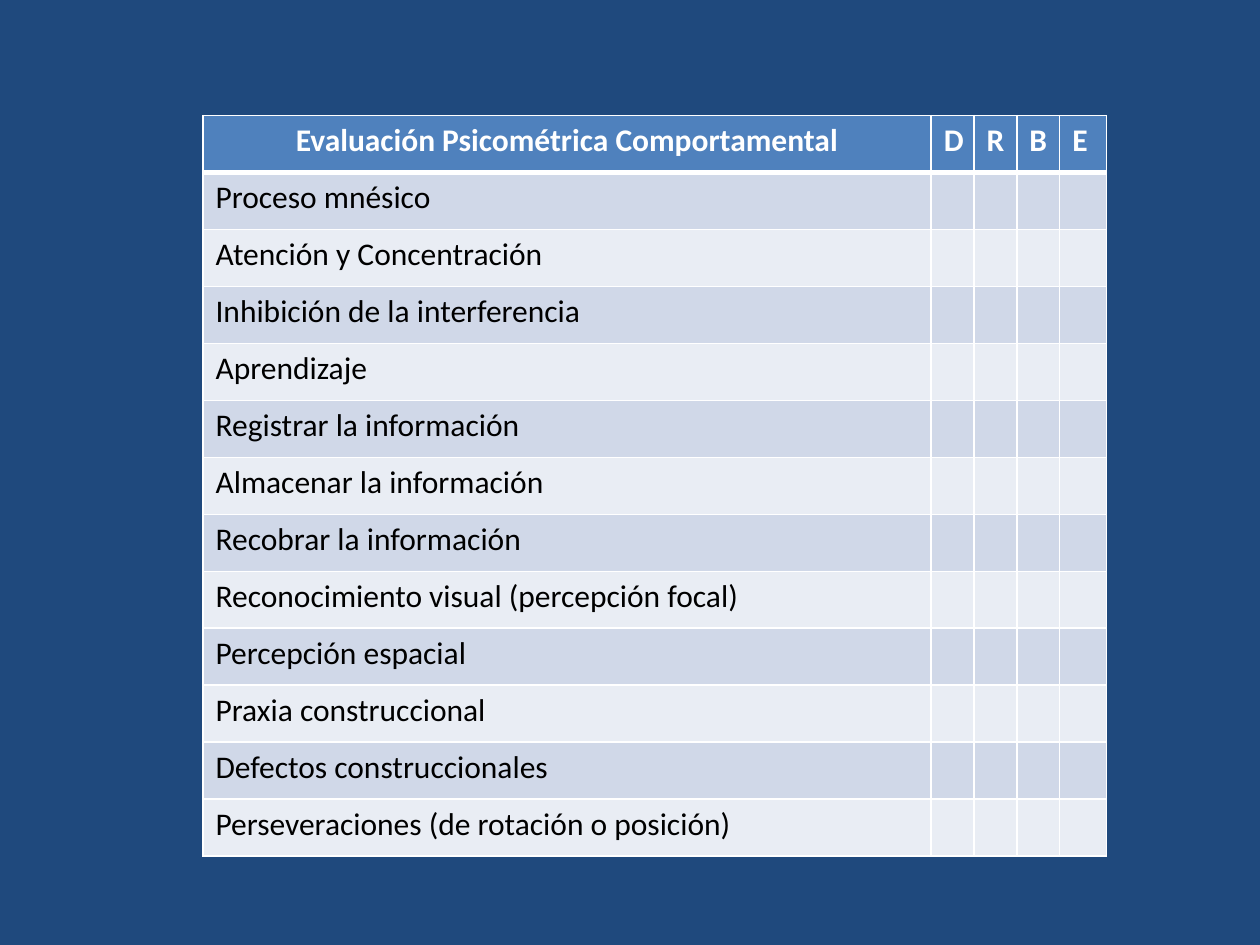
from dataclasses import dataclass

import pptx
import pptx.dml.color
import pptx.enum.text
import pptx.util
from lxml import etree
from pptx.oxml.ns import qn

Pt = pptx.util.Pt


@dataclass(frozen=True)
class Theme:
    background: str = "1F497D"
    header: str = "4F81BD"
    bands: tuple = ("D0D8E8", "E9EDF4")
    light: str = "FFFFFF"
    dark: str = "000000"
    font: str = "Calibri"
    size: float = 18
    border: float = 1
    header_border: float = 3


THEME = Theme()
RATINGS = ["D", "R", "B", "E"]
HEADER = ["Evaluación Psicométrica Comportamental"] + RATINGS
PROCESSES = [
    "Proceso mnésico",
    "Atención y Concentración",
    "Inhibición de la interferencia",
    "Aprendizaje",
    "Registrar la información",
    "Almacenar la información",
    "Recobrar la información",
    "Reconocimiento visual (percepción focal)",
    "Percepción espacial",
    "Praxia construccional",
    "Defectos construccionales",
    "Perseveraciones (de rotación o posición)",
]
LEFT, TOP = 116, 66.1
COLUMN_WIDTHS = [416.1, 24.5, 24.5, 24.5, 26.6]
ROW_HEIGHT = 32.57


def rgb(value):
    return pptx.dml.color.RGBColor.from_string(value)


def set_borders(cell, top, bottom):
    """Draw all four edges; top and bottom are line widths in points."""
    tc_pr = cell._tc.get_or_add_tcPr()
    widths = {"L": THEME.border, "R": THEME.border, "T": top, "B": bottom}
    for side, width in widths.items():
        ln = etree.SubElement(tc_pr, qn(f"a:ln{side}"), w=str(Pt(width)))
        fill = etree.SubElement(ln, qn("a:solidFill"))
        etree.SubElement(fill, qn("a:srgbClr"), val=THEME.light)


def format_cell(cell, text, fill, color, bold):
    cell.fill.solid()
    cell.fill.fore_color.rgb = rgb(fill)
    cell.text_frame.text = text
    for r in cell.text_frame.paragraphs[0].runs:
        r.font.name = THEME.font
        r.font.size = Pt(THEME.size)
        r.font.bold = bold
        r.font.color.rgb = rgb(color)


def add_rating_table(s):
    rows = [HEADER] + [[name] + [""] * len(RATINGS) for name in PROCESSES]
    frame = s.shapes.add_table(
        len(rows), len(HEADER), Pt(LEFT), Pt(TOP),
        Pt(sum(COLUMN_WIDTHS)), Pt(ROW_HEIGHT * len(rows)))
    table = frame.table
    for column, width in zip(table.columns, COLUMN_WIDTHS):
        column.width = Pt(width)
    for i, texts in enumerate(rows):
        table.rows[i].height = Pt(ROW_HEIGHT)
        is_header = i == 0
        fill = THEME.header if is_header else THEME.bands[(i - 1) % 2]
        color = THEME.light if is_header else THEME.dark
        top = THEME.header_border if i == 1 else THEME.border
        bottom = THEME.header_border if is_header else THEME.border
        for j, text in enumerate(texts):
            cell = table.cell(i, j)
            set_borders(cell, top, bottom)
            format_cell(cell, text, fill, color, is_header)
    title = table.cell(0, 0).text_frame.paragraphs[0]
    title.alignment = pptx.enum.text.PP_ALIGN.CENTER


def main():
    prs = pptx.Presentation()
    prs.slide_width, prs.slide_height = Pt(720), Pt(540)
    s = prs.slides.add_slide(prs.slide_layouts[6])
    s.background.fill.solid()
    s.background.fill.fore_color.rgb = rgb(THEME.background)
    add_rating_table(s)
    prs.save("out.pptx")


if __name__ == "__main__":
    main()
